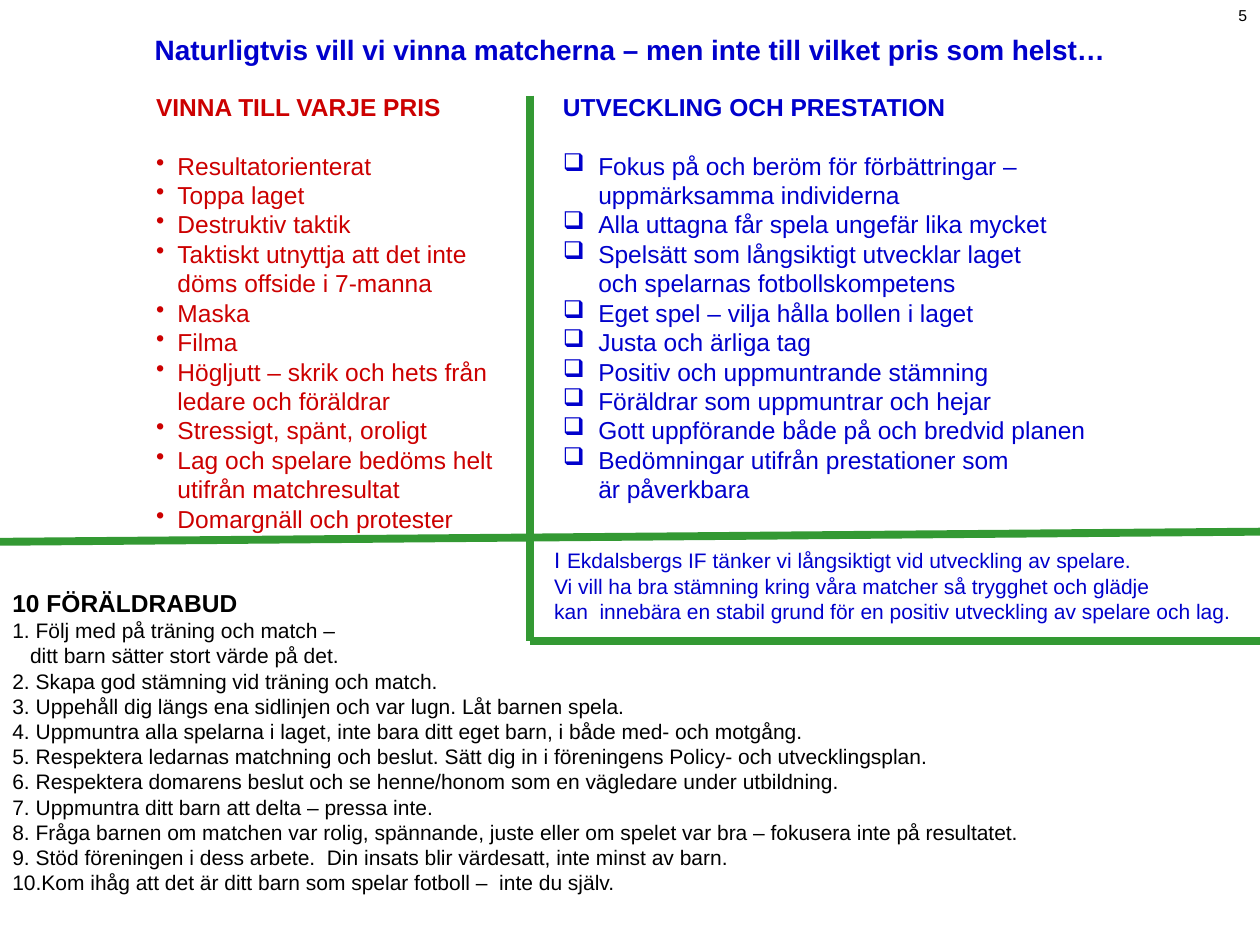
import pptx
import pptx.dml.color
import pptx.enum.shapes
import pptx.enum.text
import pptx.oxml.ns
import pptx.util
from lxml import etree
from pptx.util import Inches

RED, BLUE, GREEN, BLACK = "CC0000", "0000CC", "339933", "000000"

WIN_AT_ALL_COSTS = [
    "Resultatorienterat",
    "Toppa laget",
    "Destruktiv taktik",
    "Taktiskt utnyttja att det inte\ndöms offside i 7-manna",
    "Maska",
    "Filma",
    "Högljutt – skrik och hets från\nledare och föräldrar",
    "Stressigt, spänt, oroligt",
    "Lag och spelare bedöms helt\nutifrån matchresultat",
    "Domargnäll och protester",
]
DEVELOPMENT = [
    "Fokus på och beröm för förbättringar –\nuppmärksamma individerna",
    "Alla uttagna får spela ungefär lika mycket",
    "Spelsätt som långsiktigt utvecklar laget\noch spelarnas fotbollskompetens",
    "Eget spel – vilja hålla bollen i laget",
    "Justa och ärliga tag",
    "Positiv och uppmuntrande stämning",
    "Föräldrar som uppmuntrar och hejar",
    "Gott uppförande både på och bredvid planen",
    "Bedömningar utifrån prestationer som\när påverkbara",
]
PARENT_RULES = [
    "1. Följ med på träning och match –\nditt barn sätter stort värde på det.",
    "2. Skapa god stämning vid träning och match.",
    "3. Uppehåll dig längs ena sidlinjen och var lugn. Låt barnen spela.",
    "4. Uppmuntra alla spelarna i laget, inte bara ditt eget barn, i både med- och motgång.",
    "5. Respektera ledarnas matchning och beslut. Sätt dig in i föreningens Policy- och utvecklingsplan.",
    "6. Respektera domarens beslut och se henne/honom som en vägledare under utbildning.",
    "7. Uppmuntra ditt barn att delta – pressa inte.",
    "8. Fråga barnen om matchen var rolig, spännande, juste eller om spelet var bra – fokusera inte på resultatet.",
    "9. Stöd föreningen i dess arbete.  Din insats blir värdesatt, inte minst av barn.",
    "10.Kom ihåg att det är ditt barn som spelar fotboll –  inte du själv.",
]
CLUB_STATEMENT = [
    "Ekdalsbergs IF tänker vi långsiktigt vid utveckling av spelare.",
    "Vi vill ha bra stämning kring våra matcher så trygghet och glädje",
    "kan  innebära en stabil grund för en positiv utveckling av spelare och lag.",
]
GREEN_LINES = [
    (4.21, 0.76, 4.21, 4.62),
    (10, 4.22, 0, 4.3),
    (4.21, 4.54, 4.21, 5.09),
    (10, 5.09, 4.21, 5.09),
]


def rgb(color):
    return pptx.dml.color.RGBColor.from_string(color)


def add_text_box(slide, left, top, width, height, wrap=True):
    frame = slide.shapes.add_textbox(
        Inches(left), Inches(top), Inches(width), Inches(height)).text_frame
    frame.word_wrap = wrap
    frame.auto_size = pptx.enum.text.MSO_AUTO_SIZE.SHAPE_TO_FIT_TEXT
    return frame


def add_paragraph(frame):
    """Return the empty first paragraph, or a new one after the last."""
    first = frame.paragraphs[0]
    return frame.add_paragraph() if first.runs else first


def add_run(paragraph, text, size, color, bold=False, font="Arial"):
    """Add text as runs, with a line break at each newline."""
    for index, line in enumerate(text.split("\n")):
        if index:
            paragraph.add_line_break()
        run = paragraph.add_run()
        run.text = line
        run.font.size = pptx.util.Pt(size)
        run.font.name = font
        run.font.bold = bold
        run.font.color.rgb = rgb(color)


def set_indent(paragraph, left, first=0):
    properties = paragraph._p.get_or_add_pPr()
    properties.set("marL", str(Inches(left)))
    properties.set("indent", str(Inches(first)))


def set_bullet(paragraph, character):
    properties = paragraph._p.get_or_add_pPr()
    bullet = etree.SubElement(properties, pptx.oxml.ns.qn("a:buChar"))
    bullet.set("char", character)


def add_list(frame, heading, items, size, color, indent, bullet=None, gap=0):
    """Add a bold heading and its items with a hanging indent."""
    paragraph = add_paragraph(frame)
    add_run(paragraph, heading, 14, color, bold=True)
    paragraph.space_after = pptx.util.Pt(gap)
    for item in items:
        paragraph = add_paragraph(frame)
        set_indent(paragraph, indent, -indent)
        if bullet:
            set_bullet(paragraph, bullet)
        add_run(paragraph, item, size, color)


def add_line(slide, start_x, start_y, end_x, end_y):
    line = slide.shapes.add_connector(
        pptx.enum.shapes.MSO_CONNECTOR.STRAIGHT,
        Inches(start_x), Inches(start_y), Inches(end_x), Inches(end_y))
    line.line.color.rgb = rgb(GREEN)
    line.line.width = pptx.util.Pt(4.5)
    etree.SubElement(line._element.spPr, pptx.oxml.ns.qn("a:effectLst"))


def main():
    presentation = pptx.Presentation()
    presentation.slide_width = Inches(10)
    presentation.slide_height = Inches(7.5)
    slide = presentation.slides.add_slide(presentation.slide_layouts[6])

    add_list(add_text_box(slide, 1.14, 0.68, 2.95, 3.94),
             "VINNA TILL VARJE PRIS", WIN_AT_ALL_COSTS, 14, RED,
             indent=0.17, bullet="•", gap=16.8)
    add_list(add_text_box(slide, 4.37, 0.68, 5.63, 3.7),
             "UTVECKLING OCH PRESTATION", DEVELOPMENT, 14, BLUE,
             indent=0.28, bullet="❑", gap=16.8)

    title = add_paragraph(add_text_box(slide, 0, 0.21, 10, 0.37))
    set_indent(title, 1.13)
    add_run(title, "Naturligtvis vill vi vinna matcherna – men inte till vilket pris som helst…",
            16, BLUE, bold=True)

    statement = add_text_box(slide, 4.3, 4.3, 5.7, 0.71)
    add_run(statement.paragraphs[0], "I ", 12, BLUE, font="DejaVu Sans")
    add_run(statement.paragraphs[0], CLUB_STATEMENT[0], 12, BLUE)
    for sentence in CLUB_STATEMENT[1:]:
        add_run(add_paragraph(statement), sentence, 12, BLUE)

    page_number = add_text_box(slide, 9.73, 0, 0.27, 0.25, wrap=False)
    add_run(add_paragraph(page_number), "5", 9, BLACK)

    add_list(add_text_box(slide, 0, 4.62, 10, 2.56),
             "10 FÖRÄLDRABUD", PARENT_RULES, 12, BLACK, indent=0.14)

    for ends in GREEN_LINES:
        add_line(slide, *ends)

    presentation.save("out.pptx")


if __name__ == "__main__":
    main()
